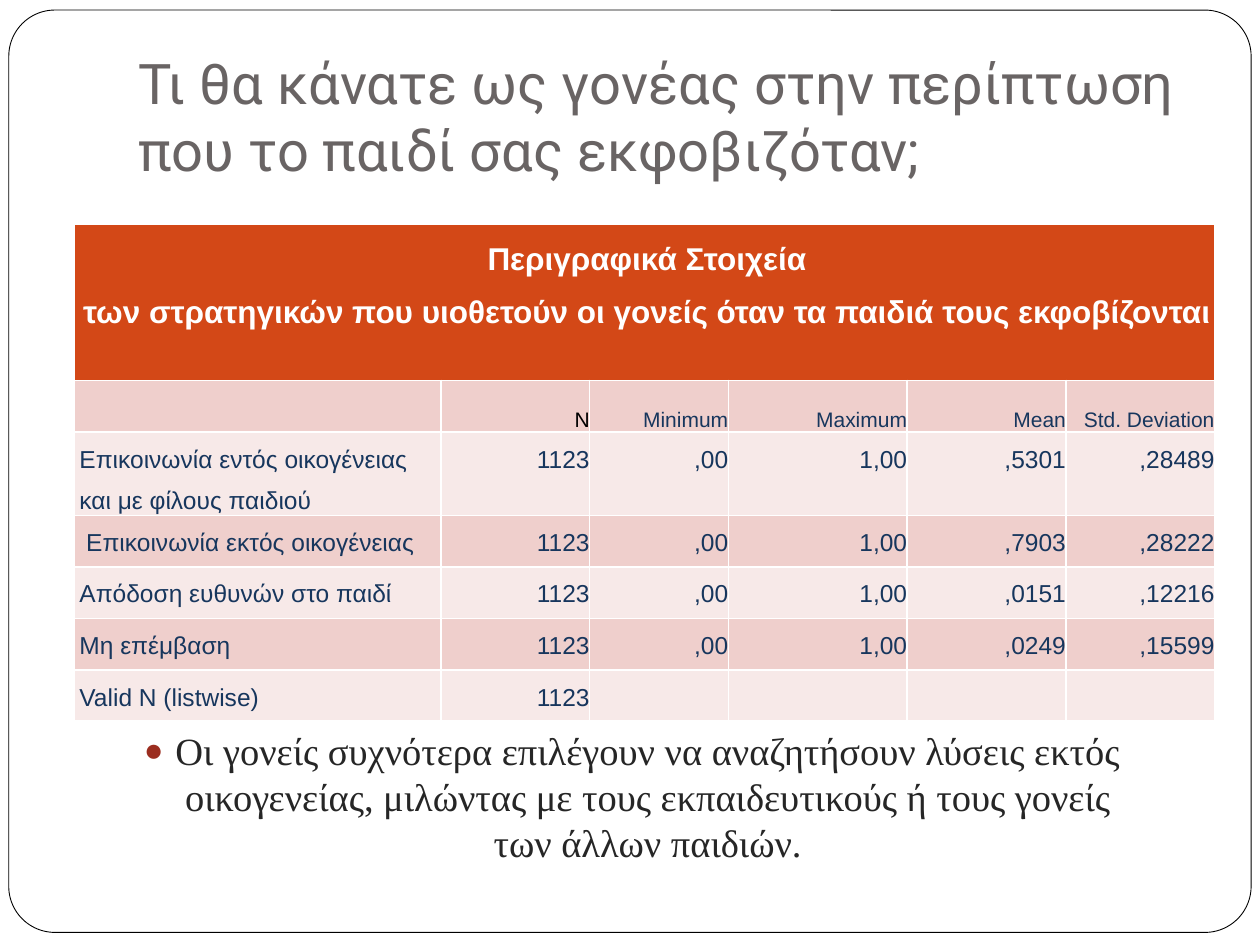
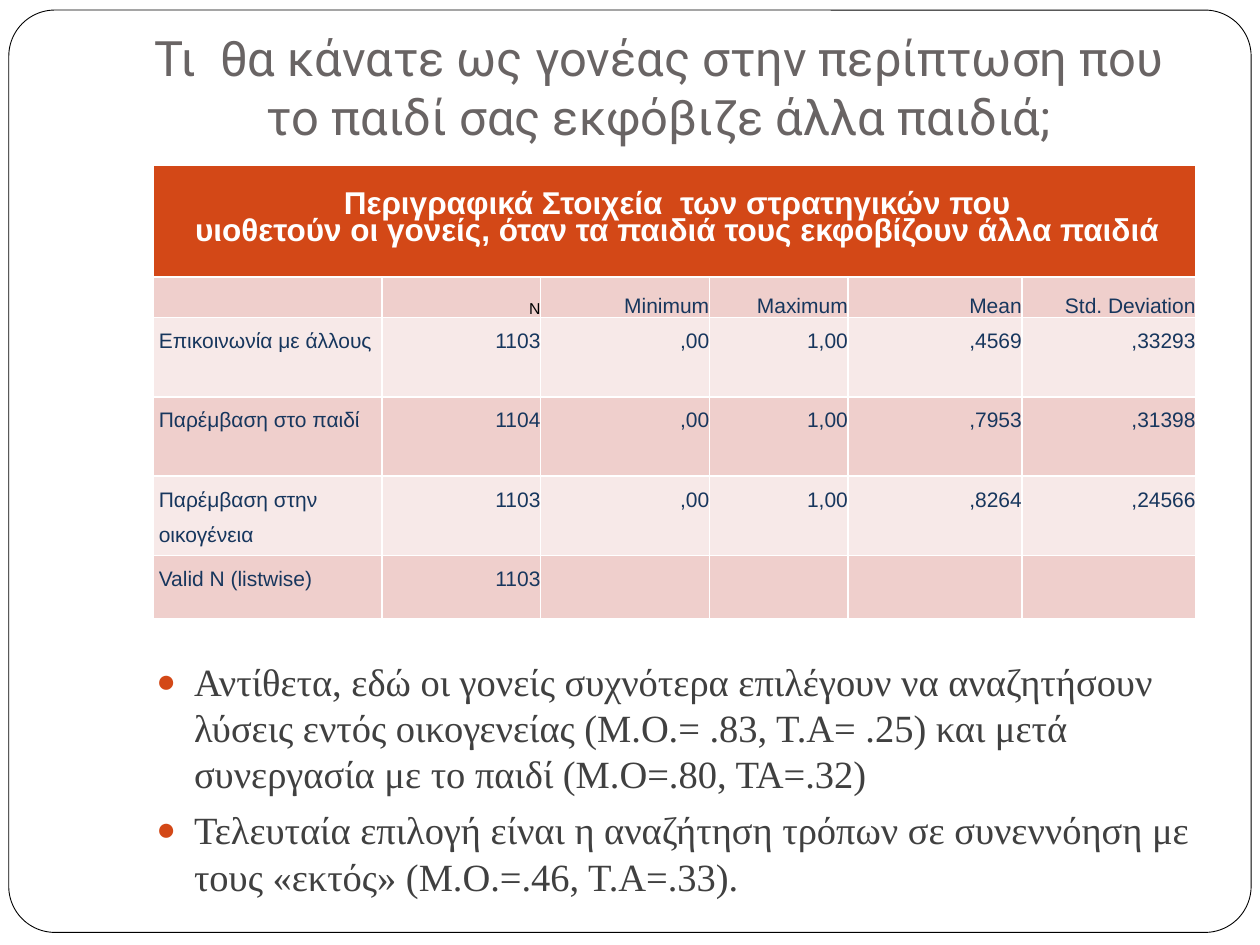
from lxml.etree import SubElement
from pptx import Presentation
from pptx.dml.color import RGBColor as RGB
from pptx.enum.shapes import MSO_SHAPE as SHAPE
from pptx.enum.text import MSO_ANCHOR as ANCHOR, MSO_AUTO_SIZE as AUTO, PP_ALIGN as ALIGN
from pptx.oxml.ns import qn
from pptx.util import Pt

SCALE = 9144
COLORS = {
    "white": "FFFFFF", "black": "000000", "title": "696464", "header": "D34817",
    "dark_band": "EFCFCC", "light_band": "F7E9E8", "cell": "17365D",
    "strong": "262626", "text": "404040", "brick": "9B2D1F",
}
STATS = ["", "N", "Minimum", "Maximum", "Mean", "Std. Deviation"]


def px(n):
    return n * SCALE


def color(name):
    return RGB.from_string(COLORS[name])


class Deck:
    def __init__(self):
        self.prs = Presentation()
        self.prs.slide_width, self.prs.slide_height = px(1000), px(750)
        self.s = None

    def style(self, p, font, size, col, bold=False):
        for r in p.runs:
            f = r.font
            f.name, f.size, f.bold = font, Pt(size), bold
            f.color.rgb = color(col)

    def place(self, sp, box):
        sp.left, sp.top, sp.width, sp.height = map(px, box)
        tf = sp.text_frame
        tf.word_wrap, tf.auto_size = True, AUTO.NONE
        return tf

    def slide(self):
        self.s = self.prs.slides.add_slide(self.prs.slide_layouts[1])
        sp = self.s.shapes.add_shape(SHAPE.ROUNDED_RECTANGLE, *map(px, (7, 8, 986, 732)))
        sp.adjustments[0] = 0.05
        sp.shadow.inherit = False
        sp.fill.solid()
        sp.fill.fore_color.rgb = color("white")
        sp.line.color.rgb = color("black")
        sp.line.width = Pt(0.5)
        self.s.shapes._spTree.insert(2, sp._element)

    def title(self, text, box, size, align):
        tf = self.place(self.s.shapes.title, box)
        tf.vertical_anchor = ANCHOR.BOTTOM
        tf.margin_bottom = px(10)
        tf.text = text
        p = tf.paragraphs[0]
        p.alignment = align
        self.style(p, "Roboto", size, "title")

    def bullets(self, lines, box, col, dot, indent, hang, before, align=ALIGN.LEFT, level=0):
        tf = self.place(self.s.placeholders[1], box)
        tf.vertical_anchor = ANCHOR.TOP
        tf.text = "\n".join(lines)
        for p in tf.paragraphs:
            p.alignment, p.level, p.space_before = align, level, Pt(before)
            self.style(p, "Times New Roman", 22, col)
            pPr = p._p.get_or_add_pPr()
            pPr.set("marL", str(px(indent)))
            pPr.set("indent", str(-px(hang)))
            clr = SubElement(pPr, qn("a:buClr"))
            SubElement(clr, qn("a:srgbClr")).set("val", COLORS[dot])
            SubElement(pPr, qn("a:buSzPct")).set("val", "85000")
            SubElement(pPr, qn("a:buFont")).set("typeface", "Arial")
            SubElement(pPr, qn("a:buChar")).set("char", "●")

    def cell(self, c, text, fill, size, col, align, spacing, anchor=ANCHOR.TOP, bold=False):
        c.fill.solid()
        c.fill.fore_color.rgb = color(fill)
        c.margin_left = c.margin_right = c.margin_top = c.margin_bottom = 0
        c.vertical_anchor = anchor
        c.text = text
        for p in c.text_frame.paragraphs:
            p.alignment, p.line_spacing = align, spacing
            p._p.get_or_add_pPr().set("marL", str(px(4)))
            self.style(p, "Arial", size, col, bold)

    def table(self, at, cols, heights, heading, rows, size, n_size, head_spacing, head_pad):
        frame = self.s.shapes.add_table(len(heights), len(cols), *map(px, (*at, sum(cols), sum(heights))))
        t = frame.table
        for col, w in zip(t.columns, cols):
            col.width = px(w)
        for row, h in zip(t.rows, heights):
            row.height = px(h)
        head = t.cell(0, 0)
        head.merge(t.cell(0, len(cols) - 1))
        self.cell(head, heading, "header", 18, "white", ALIGN.CENTER, head_spacing, bold=True)
        head.margin_top = px(head_pad)
        for j, name in enumerate(STATS):
            look = (n_size, "black") if name == "N" else (12, "cell")
            self.cell(t.cell(1, j), name, "dark_band", *look, ALIGN.RIGHT, Pt(16), ANCHOR.BOTTOM)
        for i, row in enumerate(rows):
            fill = "dark_band" if i % 2 else "light_band"
            for j in range(len(cols)):
                text = row[j] if j < len(row) else ""
                align = ALIGN.RIGHT if j else ALIGN.LEFT
                self.cell(t.cell(i + 2, j), text, fill, size, "cell", align, 1.5)


def main():
    d = Deck()

    d.slide()
    d.title("Τι θα κάνατε ως γονέας στην περίπτωση που το παιδί σας εκφοβιζόταν;",
            (100, 30, 850, 125), 32, ALIGN.LEFT)
    d.bullets(["Οι γονείς συχνότερα επιλέγουν να αναζητήσουν λύσεις εκτός οικογενείας, "
               "μιλώντας με τους εκπαιδευτικούς ή τους γονείς των άλλων παιδιών."],
              (59, 572, 850, 146), "strong", "brick", 60, 25, 3.7, ALIGN.CENTER, 1)
    d.table((59, 178), [291, 118, 110, 142, 126, 118], [124, 41, 66] + [41] * 3 + [40],
            "Περιγραφικά Στοιχεία\n"
            "των στρατηγικών που υιοθετούν οι γονείς όταν τα παιδιά τους εκφοβίζονται",
            [("Επικοινωνία εντός οικογένειας και με φίλους παιδιού", "1123", ",00", "1,00", ",5301", ",28489"),
             (" Επικοινωνία εκτός οικογένειας", "1123", ",00", "1,00", ",7903", ",28222"),
             ("Απόδοση ευθυνών στο παιδί", "1123", ",00", "1,00", ",0151", ",12216"),
             ("Μη επέμβαση", "1123", ",00", "1,00", ",0249", ",15599"),
             ("Valid N (listwise)", "1123")],
            14, 12, 1.5, 0)

    d.slide()
    d.title("Τι  θα κάνατε ως γονέας στην περίπτωση που το παιδί σας εκφόβιζε άλλα παιδιά;",
            (98, 0, 850, 125), 27.9, ALIGN.CENTER)
    d.bullets(["Αντίθετα, εδώ οι γονείς συχνότερα επιλέγουν να αναζητήσουν λύσεις εντός "
               "οικογενείας (Μ.Ο.= .83, Τ.Α= .25) και μετά συνεργασία με το παιδί (Μ.Ο=.80, ΤΑ=.32)",
               "Τελευταία επιλογή είναι η αναζήτηση τρόπων σε συνεννόηση με τους «εκτός» "
               "(Μ.Ο.=.46, Τ.Α=.33)."],
              (114, 517, 850, 213), "text", "header", 30, 30, 5.8)
    d.table((122, 131), [181, 126, 134, 110, 138, 138], [89, 32] + [63] * 3 + [50],
            "Περιγραφικά Στοιχεία  των στρατηγικών που\n"
            "υιοθετούν οι γονείς, όταν τα παιδιά τους εκφοβίζουν άλλα παιδιά",
            [("Επικοινωνία με άλλους", "1103", ",00", "1,00", ",4569", ",33293"),
             ("Παρέμβαση στο παιδί", "1104", ",00", "1,00", ",7953", ",31398"),
             ("Παρέμβαση στην οικογένεια", "1103", ",00", "1,00", ",8264", ",24566"),
             ("Valid N (listwise)", "1103")],
            12, 9, Pt(16), 22)

    d.prs.save("out.pptx")


if __name__ == "__main__":
    main()
